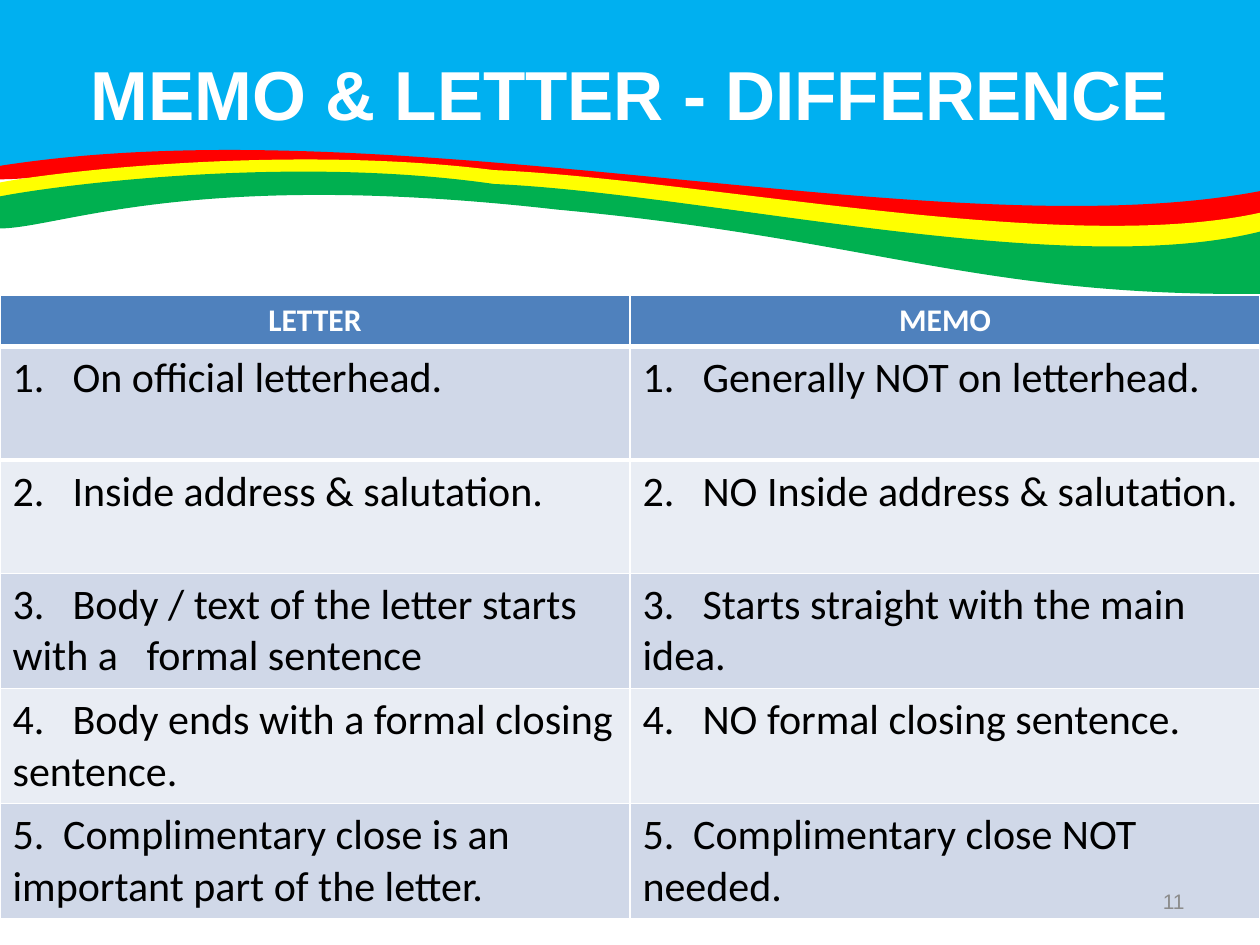
from lxml.etree import SubElement
from pptx import Presentation
from pptx.dml.color import RGBColor
from pptx.enum.text import MSO_ANCHOR as Anchor, PP_ALIGN as Align
from pptx.oxml import parse_xml
from pptx.oxml.ns import nsdecls, qn
from pptx.util import Cm, Pt

WHITE = RGBColor(0xFF, 0xFF, 0xFF)
BLACK = RGBColor(0x00, 0x00, 0x00)
GREY = RGBColor(0x8C, 0x8C, 0x8C)
SKY = RGBColor(0x00, 0xB0, 0xF0)
RED = RGBColor(0xFF, 0x00, 0x00)
YELLOW = RGBColor(0xFF, 0xFF, 0x00)
GREEN = RGBColor(0x00, 0xB0, 0x50)
HEADER = RGBColor(0x4F, 0x81, 0xBD)
BANDS = (RGBColor(0xD0, 0xD8, 0xE8), RGBColor(0xE9, 0xED, 0xF4))

# Outlines in cm: a pair is a straight line's end, six numbers are a Bézier curve.
SKY_PATH = [(-0.03, -0.03), (25.4, -0.03), (25.4, 4.65),
            (16.92, 4.65, 7.32, 2.34, -0.03, 3.38)]
RED_PATH = [(25.4, 3.89), (25.4, 4.65),
            (19.71, 5.41, 15.9, 3.99, 9.53, 3.45),
            (3.07, 3.1, 1.19, 3.58, 0, 3.58), (0, 3.38),
            (8.08, 2.11, 18.9, 5.11, 25.4, 3.89)]
YELLOW_PATH = [(25.4, 4.29), (25.4, 5.36),
               (19.66, 5.41, 17.6, 4.37, 11.23, 3.86),
               (3.84, 3.12, 1.19, 4.22, 0, 4.19),
               (0, 4.17, -0.03, 4.01, 0, 3.68),
               (1.17, 3.45, 5.87, 2.92, 9.96, 3.43),
               (14.17, 3.61, 21.44, 5.16, 25.4, 4.29)]
GREEN_PATH = [(25.4, 4.67), (25.4, 5.89),
              (19.66, 5.94, 17.6, 4.78, 11.23, 4.19),
              (3.84, 3.35, 1.19, 4.57, 0, 4.57),
              (0, 4.52, -0.03, 4.37, 0, 3.96),
              (1.17, 3.73, 5.87, 3.12, 9.96, 3.71),
              (14.17, 3.89, 21.44, 5.66, 25.4, 4.67)]

ROWS = [
    ("On official letterhead.", "Generally NOT on letterhead."),
    ("Inside address & salutation.", "NO Inside address & salutation."),
    ("Body / text of the letter starts with a\tformal sentence",
     "Starts straight with the main idea."),
    ("Body ends with a formal closing sentence.", "NO formal closing sentence."),
    ("Complimentary close is an important part of the letter.",
     "Complimentary close NOT needed."),
]


def write(tf, text, size=24, font="Calibri", color=BLACK, bold=False,
          align=Align.LEFT, tabs=()):
    """Fill the first paragraph; tabs are the positions of its tab stops."""
    p = tf.paragraphs[0]
    p.alignment = align
    r = p.add_run()
    r.text = text
    r.font.size, r.font.name, r.font.bold = Pt(size), font, bold
    r.font.color.rgb = color
    if tabs:
        stops = SubElement(p._p.get_or_add_pPr(), qn("a:tabLst"))
        for tab in tabs:
            SubElement(stops, qn("a:tab"), pos=str(tab), algn="l")


def add_wave(shapes, path):
    """Draw the outline through its end points, then bend the curved segments."""
    ends = [(Cm(seg[-2]), Cm(seg[-1])) for seg in path]
    builder = shapes.build_freeform(*ends[0])
    builder.add_line_segments(ends[1:], close=True)
    sp = builder.convert_to_shape()
    lines = list(sp._element.iter(qn("a:lnTo")))
    for line, seg in zip(lines, path[1:]):
        if len(seg) == 6:
            curve = parse_xml(f"<a:cubicBezTo {nsdecls('a')}/>")
            for x, y in zip(seg[::2], seg[1::2]):
                SubElement(curve, qn("a:pt"), x=str(Cm(x) - sp.left), y=str(Cm(y) - sp.top))
            line.getparent().replace(line, curve)
    return sp


prs = Presentation()
prs.slide_width, prs.slide_height = Cm(25.4), Cm(19.05)
s = prs.slides.add_slide(prs.slide_layouts[5])

# Waves, from back to front
for path, color, outlined in ((SKY_PATH, SKY, False), (RED_PATH, RED, False),
                              (GREEN_PATH, GREEN, True), (RED_PATH, RED, True),
                              (YELLOW_PATH, YELLOW, False), (GREEN_PATH, GREEN, False)):
    sp = add_wave(s.shapes, path)
    sp.shadow.inherit = False
    sp.fill.solid()
    sp.fill.fore_color.rgb = color
    if outlined:
        sp.line.color.rgb = color
        sp.line.width = Pt(2)
    else:
        sp.line.fill.background()

# Title, brought in front of the waves
title = s.shapes.title
s.shapes._spTree.append(title._element)
title.left, title.top, title.width, title.height = Cm(1.27), Cm(0.76), Cm(22.86), Cm(2.21)
title.text_frame.vertical_anchor = Anchor.MIDDLE
write(title.text_frame, "MEMO & LETTER - DIFFERENCE", size=39.6, font="Arial",
      color=WHITE, bold=True, align=Align.CENTER)

# Comparison table
table = s.shapes.add_table(len(ROWS) + 1, 2, 0, Cm(5.95), Cm(25.4), Cm(12.47)).table
table.rows[0].height = Cm(1.02)
for col, heading in enumerate(("LETTER", "MEMO")):
    cell = table.cell(0, col)
    cell.fill.solid()
    cell.fill.fore_color.rgb = HEADER
    write(cell.text_frame, heading, size=18, color=WHITE, bold=True, align=Align.CENTER)
for n, texts in enumerate(ROWS, start=1):
    table.rows[n].height = Cm(2.29)
    tabs = (Cm(1.02),) if n == len(ROWS) else (Cm(1.21), Cm(2.7))
    for col, text in enumerate(texts):
        cell = table.cell(n, col)
        cell.fill.solid()
        cell.fill.fore_color.rgb = BANDS[(n - 1) % 2]
        write(cell.text_frame, f"{n}.\t{text}", tabs=tabs)

# Thick rule under the headings
for col in range(2):
    for row, side in ((0, "lnB"), (1, "lnT")):
        rule = parse_xml(f'<a:{side} {nsdecls("a")} w="{Pt(3)}"><a:solidFill>'
                         f'<a:srgbClr val="{WHITE}"/></a:solidFill></a:{side}>')
        table.cell(row, col)._tc.get_or_add_tcPr().insert(0, rule)

# Slide number
tf = s.shapes.add_textbox(Cm(18.21), Cm(17.65), Cm(5.92), Cm(1.02)).text_frame
tf.word_wrap = True
tf.vertical_anchor = Anchor.MIDDLE
write(tf, "11", size=12, font="Arial", color=GREY, align=Align.RIGHT)

prs.save("out.pptx")
